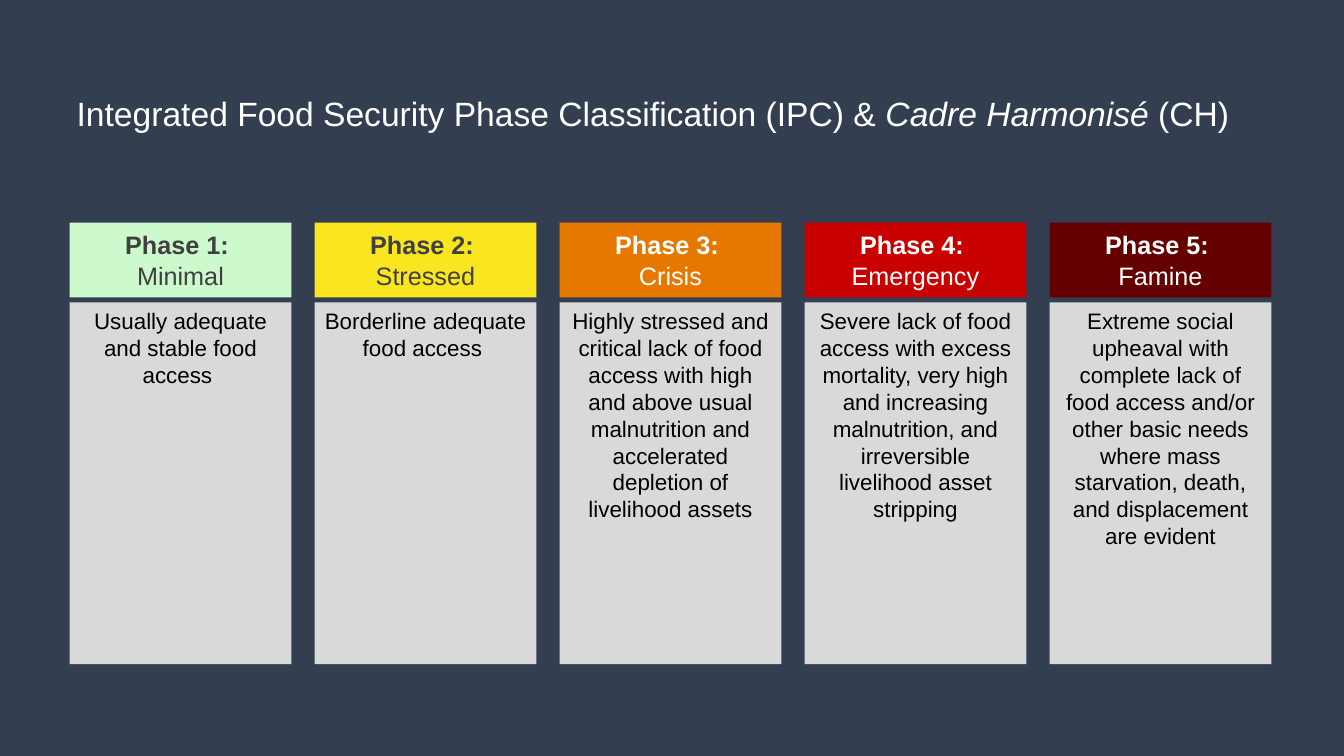
"""Build a slide comparing the five phases of food insecurity."""
from pptx import Presentation
from pptx.dml.color import RGBColor
from pptx.enum.shapes import MSO_SHAPE
from pptx.enum.text import MSO_ANCHOR, MSO_AUTO_SIZE, PP_ALIGN
from pptx.util import Inches, Pt

FONT = "Arial"
NAVY, WHITE, BLACK, GREY, DARK = "333F50", "FFFFFF", "000000", "D9D9D9", "404040"
TITLE = [
    ("Integrated Food Security Phase Classification (IPC) & ", False),
    ("Cadre Harmonisé ", True),
    ("(CH)", False),
]
PHASES = [
    ("Minimal", "CDFACD", DARK, "Usually adequate and stable food access "),
    ("Stressed", "FAE61E", DARK, "Borderline adequate food access "),
    ("Crisis", "E67800", WHITE,
     "Highly stressed and critical lack of food access with high and above usual "
     "malnutrition and accelerated depletion of livelihood assets"),
    ("Emergency", "C80000", WHITE,
     "Severe lack of food access with excess mortality, very high and increasing "
     "malnutrition, and irreversible livelihood asset stripping"),
    ("Famine", "640000", WHITE,
     "Extreme social upheaval with complete lack of food access and/or other basic needs "
     "where mass starvation, death, and displacement are evident"),
]
LEFT, COL_W, PITCH = 0.69, 2.2, 2.43
HEAD_TOP, HEAD_H = 2.21, 0.74
BODY_TOP, BODY_H = 3, 3.59


def rgb(color):
    """Turn a hex string into a colour."""
    return RGBColor.from_string(color)


def add_run(p, text, size, color, bold=False, italic=False):
    """Append a formatted run to a paragraph."""
    r = p.add_run()
    r.text = text
    r.font.name, r.font.size = FONT, Pt(size)
    r.font.bold, r.font.italic = bold, italic
    r.font.color.rgb = rgb(color)


def add_box(s, x, y, h, fill, anchor, lines, size, color):
    """Add a column-wide box holding centred lines of (text, bold)."""
    sp = s.shapes.add_shape(MSO_SHAPE.RECTANGLE, Inches(x), Inches(y), Inches(COL_W), Inches(h))
    sp.shadow.inherit = False
    sp.fill.solid()
    sp.fill.fore_color.rgb = rgb(fill)
    sp.line.fill.background()
    tf = sp.text_frame
    tf.word_wrap = True
    tf.vertical_anchor = anchor
    for i, (text, bold) in enumerate(lines):
        p = tf.add_paragraph() if i else tf.paragraphs[0]
        p.alignment = PP_ALIGN.CENTER
        add_run(p, text, size, color, bold)


def add_title(s):
    """Place and fill the title placeholder."""
    sp = s.shapes.title
    sp.left, sp.top, sp.width, sp.height = map(Inches, (LEFT, 0.5, 12.26, 1.25))
    tf = sp.text_frame
    tf.word_wrap = True
    tf.auto_size = MSO_AUTO_SIZE.NONE
    tf.vertical_anchor = MSO_ANCHOR.MIDDLE
    tf.margin_left = tf.margin_right = Inches(0.07)
    tf.margin_top = tf.margin_bottom = Inches(0.04)
    p = tf.paragraphs[0]
    p.alignment = PP_ALIGN.LEFT
    for text, italic in TITLE:
        add_run(p, text, 24, WHITE, italic=italic)


def main():
    """Assemble and save the slide."""
    prs = Presentation()
    prs.slide_width, prs.slide_height = Inches(13.33), Inches(7.5)
    s = prs.slides.add_slide(prs.slide_layouts[5])
    s.background.fill.solid()
    s.background.fill.fore_color.rgb = rgb(NAVY)
    add_title(s)
    for i, (name, fill, color, text) in enumerate(PHASES):
        x = LEFT + i * PITCH
        head = [(f"Phase {i + 1}: ", True), (name, False)]
        add_box(s, x, HEAD_TOP, HEAD_H, fill, MSO_ANCHOR.MIDDLE, head, 18, color)
        add_box(s, x, BODY_TOP, BODY_H, GREY, MSO_ANCHOR.TOP, [(text, False)], 16, BLACK)
    prs.save("out.pptx")


if __name__ == "__main__":
    main()
